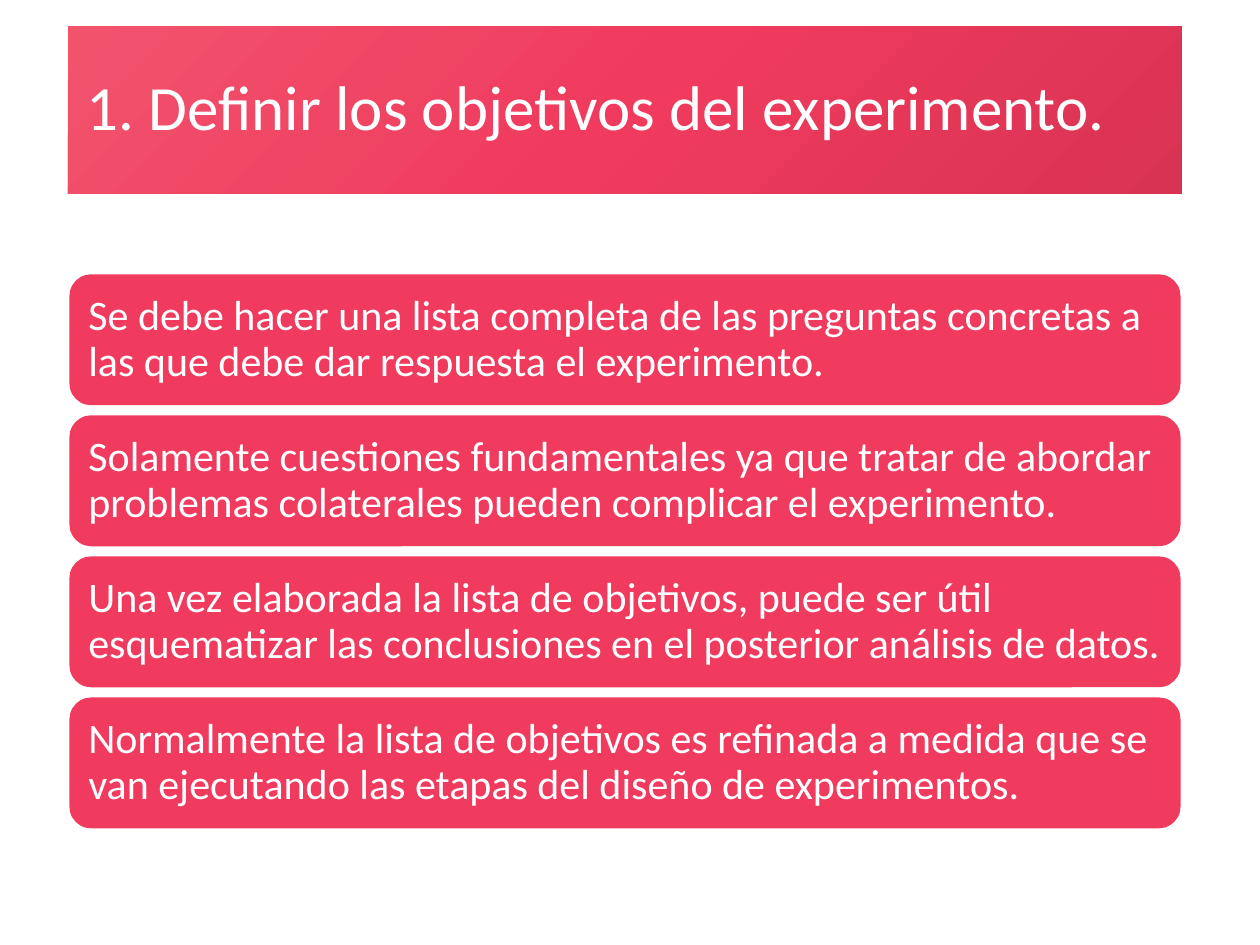
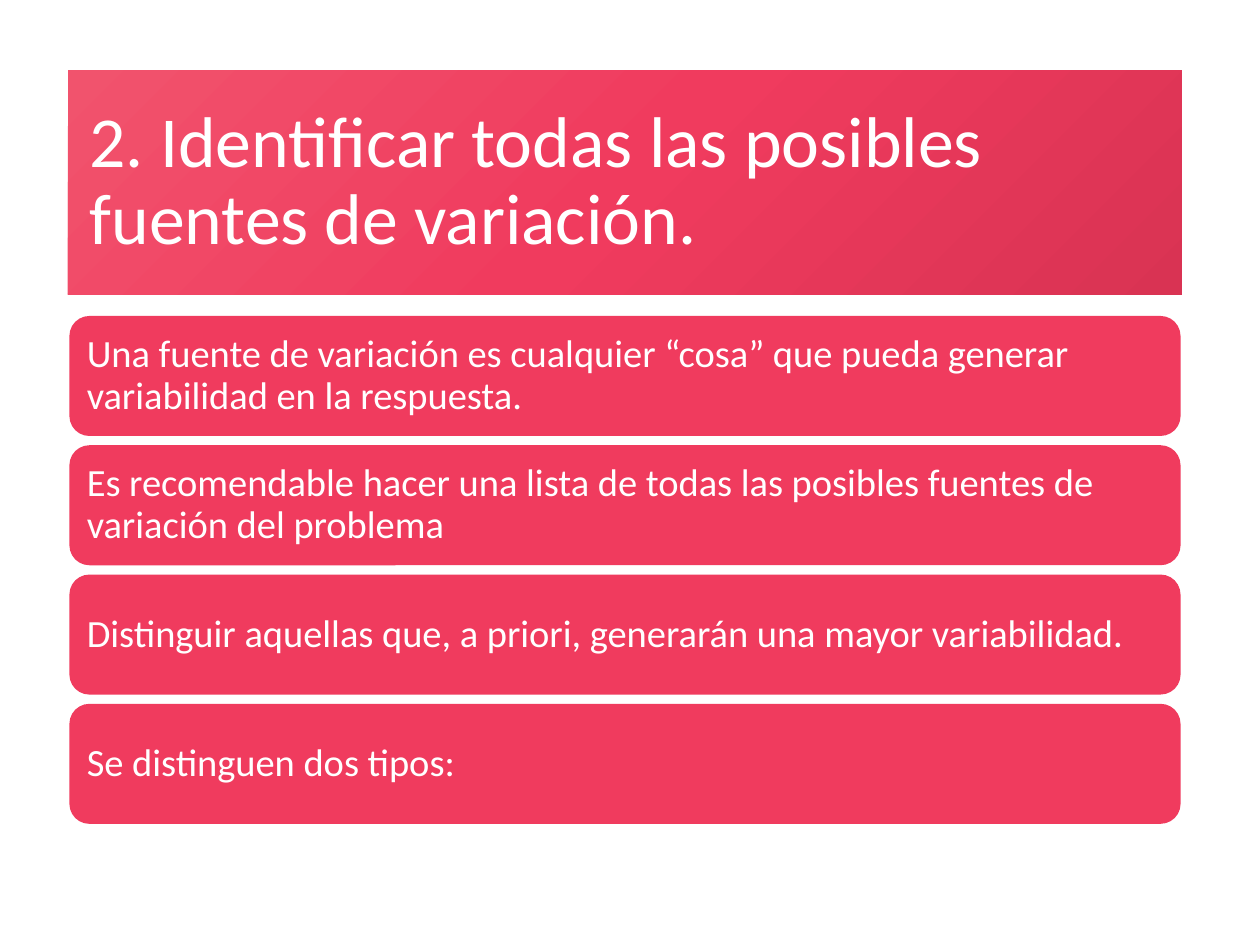
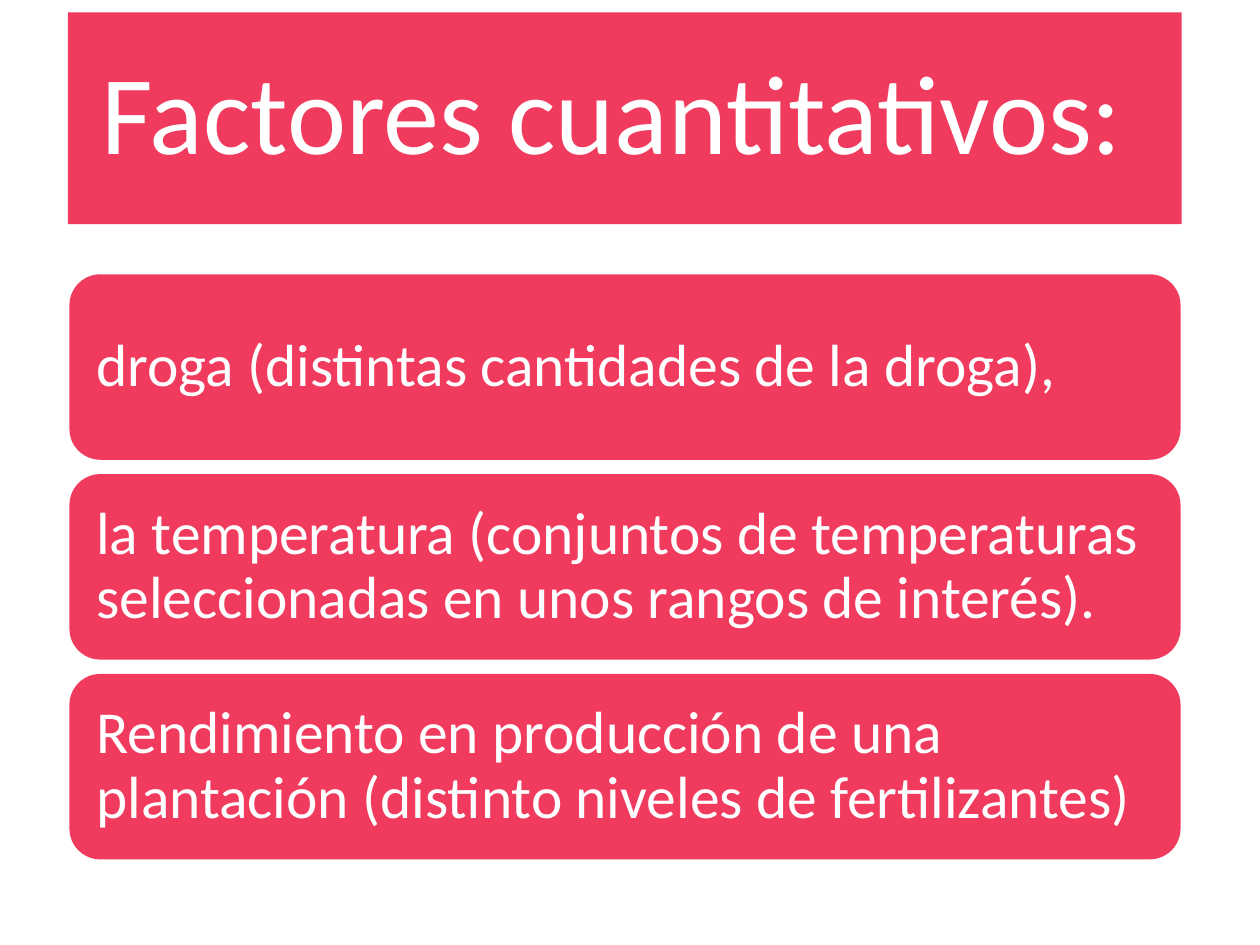
import copy

import pptx
import pptx.dml.color
import pptx.enum.shapes
import pptx.enum.text
import pptx.oxml
import pptx.oxml.ns
import pptx.util

Cm, Pt = pptx.util.Cm, pptx.util.Pt

# Content: sizes in points, places in cm
SLIDES = [
    {
        "title": "1. Definir los objetivos del experimento.",
        "size": 36, "top": 0.53, "high": 3.38, "shade": True,
        "items": [
            "Se debe hacer una lista completa de las preguntas concretas a las que "
            "debe dar respuesta el experimento.",
            "Solamente cuestiones fundamentales ya que tratar de abordar problemas "
            "colaterales pueden complicar el experimento.",
            "Una vez elaborada la lista de objetivos, puede ser útil esquematizar "
            "las conclusiones en el posterior análisis de datos.",
            "Normalmente la lista de objetivos es refinada a medida que se van "
            "ejecutando las etapas del diseño de experimentos.",
        ],
        "text": 24, "start": 5.53,
    },
    {
        "title": "2. Identificar todas las posibles fuentes de variación.",
        "size": 41, "top": 1.42, "high": 4.52, "shade": True,
        "items": [
            "Una fuente de variación es cualquier “cosa” que pueda generar "
            "variabilidad en la respuesta.",
            "Es recomendable hacer una lista de todas las posibles fuentes de "
            "variación del problema",
            "Distinguir aquellas que, a priori, generarán una mayor variabilidad.",
            "Se distinguen dos tipos:",
        ],
        "text": 22, "start": 6.37,
    },
    {
        "title": "Factores cuantitativos:",
        "size": 64, "top": 0.25, "high": 4.27, "shade": False,
        "items": [
            "droga (distintas cantidades de la droga),",
            "la temperatura (conjuntos de temperaturas seleccionadas en unos rangos "
            "de interés).",
            "Rendimiento en producción de una plantación (distinto niveles de "
            "fertilizantes)",
        ],
        "text": 34, "start": 5.53,
    },
]

# Shared look
HEX = {"light": "F1536D", "main": "F03B5E", "dark": "D93353", "text": "FFFFFF"}
RGB = {name: pptx.dml.color.RGBColor.from_string(code) for name, code in HEX.items()}
FONT = "Calibri"
BAND = {"left": Cm(1.37), "width": Cm(22.45)}
CARD = {"left": Cm(1.4), "width": Cm(22.4)}
ROUND = pptx.enum.shapes.MSO_SHAPE.ROUNDED_RECTANGLE
# Padding, card height and gap grow with the text size
PAD, TALL, GAP = 0.3, 0.11, 0.24


def assign(thing, values):
    for name, value in values.items():
        setattr(thing, name, value)


def blend(fill):
    """Diagonal three-stop gradient."""
    fill.gradient()
    fill.gradient_angle = 315
    stops = fill.gradient_stops
    last = stops[1]._gs
    last.addprevious(copy.deepcopy(last))
    for stop, name, spot in zip(fill.gradient_stops, ("light", "main", "dark"), (0, 0.5, 1)):
        stop.color.rgb = RGB[name]
        stop.position = spot


def style(shape, text, size, shade=False):
    """Colour a rounded box and set its text."""
    if shade:
        blend(shape.fill)
    else:
        shape.fill.solid()
        shape.fill.fore_color.rgb = RGB["main"]
    shape.line.fill.background()
    shape.shadow.inherit = False
    frame = shape.text_frame
    frame.text = text
    sides = ("margin_left", "margin_top", "margin_right", "margin_bottom")
    assign(frame, dict.fromkeys(sides, Pt(size * PAD)))
    assign(frame, {
        "word_wrap": True,
        "auto_size": pptx.enum.text.MSO_AUTO_SIZE.NONE,
        "vertical_anchor": pptx.enum.text.MSO_ANCHOR.MIDDLE,
    })
    line = frame.paragraphs[0]
    assign(line, {"alignment": pptx.enum.text.PP_ALIGN.LEFT, "line_spacing": 0.9})
    font = line.runs[0].font
    assign(font, {"name": FONT, "size": Pt(size)})
    font.color.rgb = RGB["text"]


def add_title(slide, data):
    title = slide.shapes.title
    assign(title, {**BAND, "top": Cm(data["top"]), "height": Cm(data["high"])})
    # Round the corners of the placeholder
    title.element.spPr.append(pptx.oxml.parse_xml(
        f'<a:prstGeom {pptx.oxml.ns.nsdecls("a")} prst="roundRect"><a:avLst/></a:prstGeom>'))
    style(title, data["title"], data["size"], data["shade"])


def add_cards(slide, data):
    size = data["text"]
    high = Cm(size * TALL)
    step = high + Pt(size * GAP)
    for row, text in enumerate(data["items"]):
        top = Cm(data["start"]) + row * step
        card = slide.shapes.add_shape(ROUND, CARD["left"], top, CARD["width"], high)
        style(card, text, size)


def main():
    deck = pptx.Presentation()
    assign(deck, {"slide_width": Cm(25.4), "slide_height": Cm(19.05)})
    for data in SLIDES:
        slide = deck.slides.add_slide(deck.slide_layouts[5])
        add_title(slide, data)
        add_cards(slide, data)
    deck.save("out.pptx")


if __name__ == "__main__":
    main()
